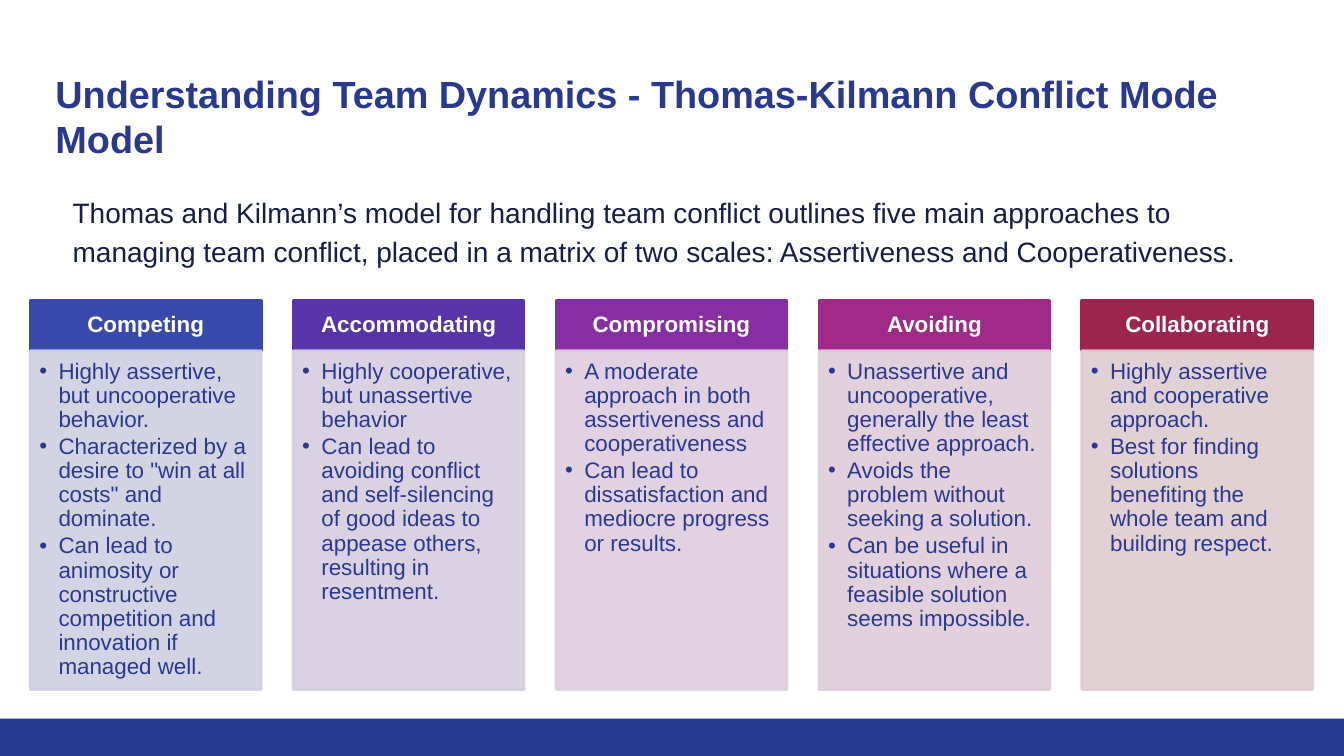
from lxml import etree
from pptx import Presentation
from pptx.dml.color import RGBColor
from pptx.enum.shapes import MSO_SHAPE as SHAPE
from pptx.enum.text import MSO_ANCHOR as ANCHOR, MSO_AUTO_SIZE as AUTOSIZE, PP_ALIGN as ALIGN
from pptx.oxml.ns import qn
from pptx.util import Inches, Pt

FONT = "Arial"
NAVY = "2A3990"
INK = "151D48"
WHITE = "FFFFFF"

# Name, header colour, panel colour, points
MODES = [
    ("Competing", "3949AB", "CED0E2", [
        "Highly assertive, but uncooperative behavior.",
        "Characterized by a desire to \"win at all costs\" and dominate.",
        "Can lead to animosity or constructive competition and innovation if managed well.",
    ]),
    ("Accommodating", "5834A8", "D6CEE1", [
        "Highly cooperative, but unassertive behavior",
        "Can lead to avoiding conflict and self-silencing of good ideas to appease others, "
        "resulting in resentment.",
    ]),
    ("Compromising", "882EA4", "DECDE0", [
        "A moderate approach in both assertiveness and cooperativeness",
        "Can lead to dissatisfaction and mediocre progress or results.",
    ]),
    ("Avoiding", "A02A87", "DFCDD9", [
        "Unassertive and uncooperative, generally the least effective approach.",
        "Avoids the problem without seeking a solution.",
        "Can be useful in situations where a feasible solution seems impossible.",
    ]),
    ("Collaborating", "9C254D", "DECDD0", [
        "Highly assertive and cooperative approach.",
        "Best for finding solutions benefiting the whole team and building respect.",
    ]),
]


def rgb(color):
    return RGBColor.from_string(color)


def setup_frame(tf, insets, anchor=ANCHOR.TOP):
    tf.word_wrap = True
    tf.auto_size = AUTOSIZE.NONE
    tf.vertical_anchor = anchor
    tf.margin_left, tf.margin_top, tf.margin_right, tf.margin_bottom = map(Inches, insets)


def add_run(p, text, size, color, bold=False):
    r = p.add_run()
    r.text = text
    r.font.name, r.font.size, r.font.bold = FONT, Pt(size), bold
    r.font.color.rgb = rgb(color)


def set_bullet(p, left=0.0, hanging=0.0, char=None):
    """Indent a paragraph and give it a bullet, or none."""
    pPr = p._p.get_or_add_pPr()
    pPr.set("marL", str(Inches(left)))
    pPr.set("indent", str(-Inches(hanging)))
    if char:
        etree.SubElement(pPr, qn("a:buFont")).set("typeface", FONT)
        etree.SubElement(pPr, qn("a:buChar")).set("char", char)
    else:
        etree.SubElement(pPr, qn("a:buNone"))


def add_rect(slide, box, color, line_width=0, opacity=100):
    sp = slide.shapes.add_shape(SHAPE.RECTANGLE, *map(Inches, box))
    sp.shadow.inherit = False
    sp.fill.solid()
    sp.fill.fore_color.rgb = rgb(color)
    if line_width:
        sp.line.color.rgb = rgb(color)
        sp.line.width = Pt(line_width)
    else:
        sp.line.fill.background()
    if opacity < 100:
        for clr in sp._element.spPr.iter(qn("a:srgbClr")):
            etree.SubElement(clr, qn("a:alpha")).set("val", str(opacity * 1000))
    return sp


def fill_placeholder(sp, box, text, size, color, bold=False, spacing=1.0, indent=0.0):
    sp.left, sp.top, sp.width, sp.height = map(Inches, box)
    setup_frame(sp.text_frame, (0.1, 0.1, 0.1, 0.1))
    p = sp.text_frame.paragraphs[0]
    p.alignment = ALIGN.LEFT
    p.line_spacing = spacing
    p.space_before = Pt(0)
    set_bullet(p, indent)
    add_run(p, text, size, color, bold)


def add_mode_card(slide, box, name, header_color, panel_color, points):
    left, top, width, height = box
    header_height = 0.5

    # Header
    header = add_rect(slide, (left, top, width, header_height), header_color, 2)
    setup_frame(header.text_frame, (0.12, 0.07, 0.12, 0.07), ANCHOR.MIDDLE)
    p = header.text_frame.paragraphs[0]
    p.alignment = ALIGN.CENTER
    p.line_spacing = 0.9
    add_run(p, name, 16, WHITE, True)

    # Panel with bullet points
    panel_box = (left, top + header_height, width, height - header_height)
    panel = add_rect(slide, panel_box, panel_color, 2, 90)
    tf = panel.text_frame
    setup_frame(tf, (0.09, 0.09, 0.12, 0.14))
    for i, point in enumerate(points):
        p = tf.add_paragraph() if i else tf.paragraphs[0]
        p.alignment = ALIGN.LEFT
        p.line_spacing = 0.9
        p.space_after = Pt(2)
        set_bullet(p, 0.19, 0.19, "•")
        add_run(p, point, 16, NAVY)


def add_mode_row(slide, box):
    left, top, width, height = box
    card_width = 2.29
    step = (width - card_width) / (len(MODES) - 1)
    for i, mode in enumerate(MODES):
        add_mode_card(slide, (left + i * step, top, card_width, height), *mode)


def build_slide(prs):
    slide = prs.slides.add_slide(prs.slide_layouts[1])
    title, body = slide.placeholders

    # Title and introduction
    fill_placeholder(title, (0.45, 0.6, 12.42, 0.89),
                     "Understanding Team Dynamics - Thomas-Kilmann Conflict Mode Model",
                     27, NAVY, bold=True)
    fill_placeholder(body, (0.45, 1.79, 12.28, 5.11),
                     "Thomas and Kilmann’s model for handling team conflict outlines five main "
                     "approaches to managing team conflict, placed in a matrix of two scales: "
                     "Assertiveness and Cooperativeness.",
                     20, INK, spacing=1.15, indent=0.17)

    # Five conflict modes
    add_mode_row(slide, (0.3, 2.98, 12.72, 3.86))

    # Footer band
    add_rect(slide, (0, 7.13, 13.33, 0.37), NAVY)


def main():
    prs = Presentation()
    prs.slide_width, prs.slide_height = Inches(13.33), Inches(7.5)
    build_slide(prs)
    prs.save("out.pptx")


if __name__ == "__main__":
    main()
